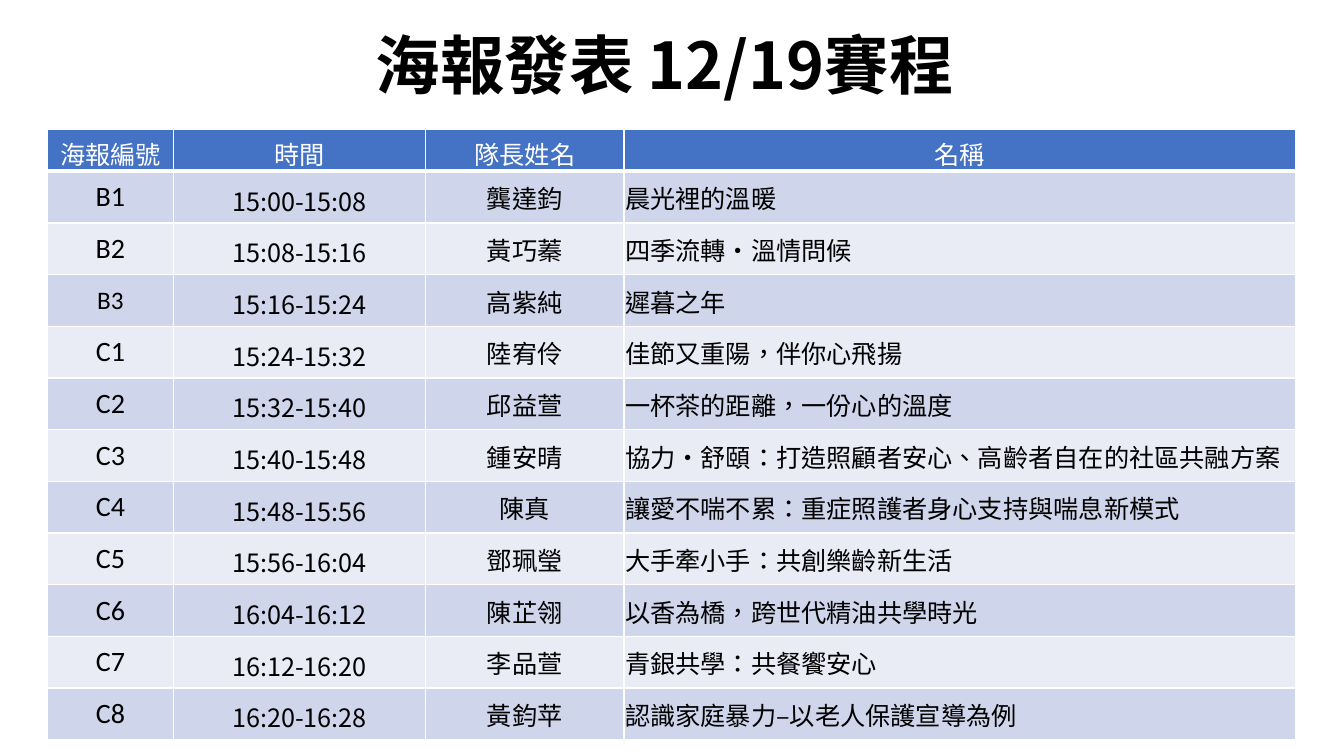
from lxml import etree
from pptx import Presentation
from pptx import util as u
from pptx.dml.color import RGBColor
from pptx.enum import text
from pptx.oxml.ns import qn

COLORS = {
    "ink": "000000",
    "white": "FFFFFF",
    "header": "4472C4",
    "odd": "CFD5EA",
    "even": "E9EBF5",
}
CJK = "Noto Sans CJK SC"
CENTER, LEFT = text.PP_ALIGN.CENTER, text.PP_ALIGN.LEFT

HEADINGS = ["海報編號", "時間", "隊長姓名", "名稱"]
COLUMN_WIDTHS = [1.25, 2.5, 1.97, 6.66]
HEADER_HEIGHT, BODY_HEIGHT = 0.42, 5.64
MINUTES_PER_TALK = 8
FIRST_TALK = 15 * 60

POSTERS = [
    ("B1", "龔達鈞", "晨光裡的溫暖"),
    ("B2", "黃巧蓁", "四季流轉‧溫情問候"),
    ("B3", "高紫純", "遲暮之年"),
    ("C1", "陸宥伶", "佳節又重陽，伴你心飛揚"),
    ("C2", "邱益萱", "一杯茶的距離，一份心的溫度"),
    ("C3", "鍾安晴", "協力・舒頤：打造照顧者安心、高齡者自在的社區共融方案"),
    ("C4", "陳真", "讓愛不喘不累：重症照護者身心支持與喘息新模式"),
    ("C5", "鄧珮瑩", "大手牽小手：共創樂齡新生活"),
    ("C6", "陳芷翎", "以香為橋，跨世代精油共學時光"),
    ("C7", "李品萱", "青銀共學：共餐饗安心"),
    ("C8", "黃鈞苹", "認識家庭暴力–以老人保護宣導為例"),
]


def write(frame, wording, size=18, font=CJK, color="ink", bold=False,
          align=CENTER, spacing=None):
    paragraph = frame.paragraphs[0]
    paragraph.alignment = align
    if spacing:
        paragraph.line_spacing = spacing
    run = paragraph.add_run()
    run.text = wording
    run.font.size = u.Pt(size)
    run.font.bold = bold
    run.font.color.rgb = RGBColor.from_string(COLORS[color])
    run.font.name = font
    # Traditional Chinese centres the full-width punctuation
    run.font._element.set("lang", "zh-TW")
    east_asian = etree.SubElement(run.font._element, qn("a:ea"))
    east_asian.set("typeface", font)


def add_title(slide, wording):
    title = slide.shapes.add_textbox(
        u.Inches(0.7), u.Inches(0), u.Inches(11.93), u.Inches(1.37))
    frame = title.text_frame
    frame.word_wrap = True
    frame.vertical_anchor = text.MSO_ANCHOR.MIDDLE
    write(frame, wording, size=46, bold=True, spacing=0.9)


def set_borders(cell, top=1, bottom=1):
    """Draw white cell borders; they must come before the fill in the XML."""
    properties = cell._tc.get_or_add_tcPr()
    widths = {"a:lnL": 1, "a:lnR": 1, "a:lnT": top, "a:lnB": bottom}
    for place, (side, width) in enumerate(widths.items()):
        line = etree.Element(qn(side), w=str(u.Pt(width)))
        fill = etree.SubElement(line, qn("a:solidFill"))
        etree.SubElement(fill, qn("a:srgbClr"), val=COLORS["white"])
        properties.insert(place, line)


def fill_cell(cell, wording, fill, margins, top=1, bottom=1, **text_format):
    """Margins are left, top, right and bottom in inches."""
    cell.vertical_anchor = text.MSO_ANCHOR.MIDDLE
    (cell.margin_left, cell.margin_top,
     cell.margin_right, cell.margin_bottom) = map(u.Inches, margins)
    cell.fill.solid()
    cell.fill.fore_color.rgb = RGBColor.from_string(COLORS[fill])
    set_borders(cell, top, bottom)
    write(cell.text_frame, wording, **text_format)


def clock(minutes):
    return f"{minutes // 60}:{minutes % 60:02}"


def talk_slot(index):
    start = FIRST_TALK + index * MINUTES_PER_TALK
    return f"{clock(start)}-{clock(start + MINUTES_PER_TALK)}"


def add_schedule(slide):
    schedule = slide.shapes.add_table(
        len(POSTERS) + 1, len(HEADINGS), u.Inches(0.47), u.Inches(1.28),
        u.Inches(sum(COLUMN_WIDTHS)),
        u.Inches(HEADER_HEIGHT + BODY_HEIGHT)).table
    for column, width in zip(schedule.columns, COLUMN_WIDTHS):
        column.width = u.Inches(width)
    row_height = BODY_HEIGHT / len(POSTERS)
    for index, row in enumerate(schedule.rows):
        row.height = u.Inches(row_height if index else HEADER_HEIGHT)

    low, tight = (0, 0.06, 0, 0), (0.01, 0.01, 0.01, 0)
    for column, heading in enumerate(HEADINGS):
        fill_cell(schedule.cell(0, column), heading, "header", low,
                  bottom=3, color="white")
    for index, (code, leader, topic) in enumerate(POSTERS):
        code_size = 18 if code == "B3" else 20
        entries = [
            (code, (0, 0, 0, 0), {"size": code_size, "font": "Calibri"}),
            (talk_slot(index), low, {}),
            (leader, tight, {}),
            (topic, tight, {"align": LEFT}),
        ]
        band = "even" if index % 2 else "odd"
        for column, (wording, margins, text_format) in enumerate(entries):
            fill_cell(schedule.cell(index + 1, column), wording, band, margins,
                      top=1 if index else 3, **text_format)


def main():
    deck = Presentation()
    deck.slide_width, deck.slide_height = u.Inches(13.33), u.Inches(7.5)
    slide = deck.slides.add_slide(deck.slide_layouts[6])
    add_title(slide, "海報發表 12/19賽程 ")
    add_schedule(slide)
    deck.save("out.pptx")


if __name__ == "__main__":
    main()
